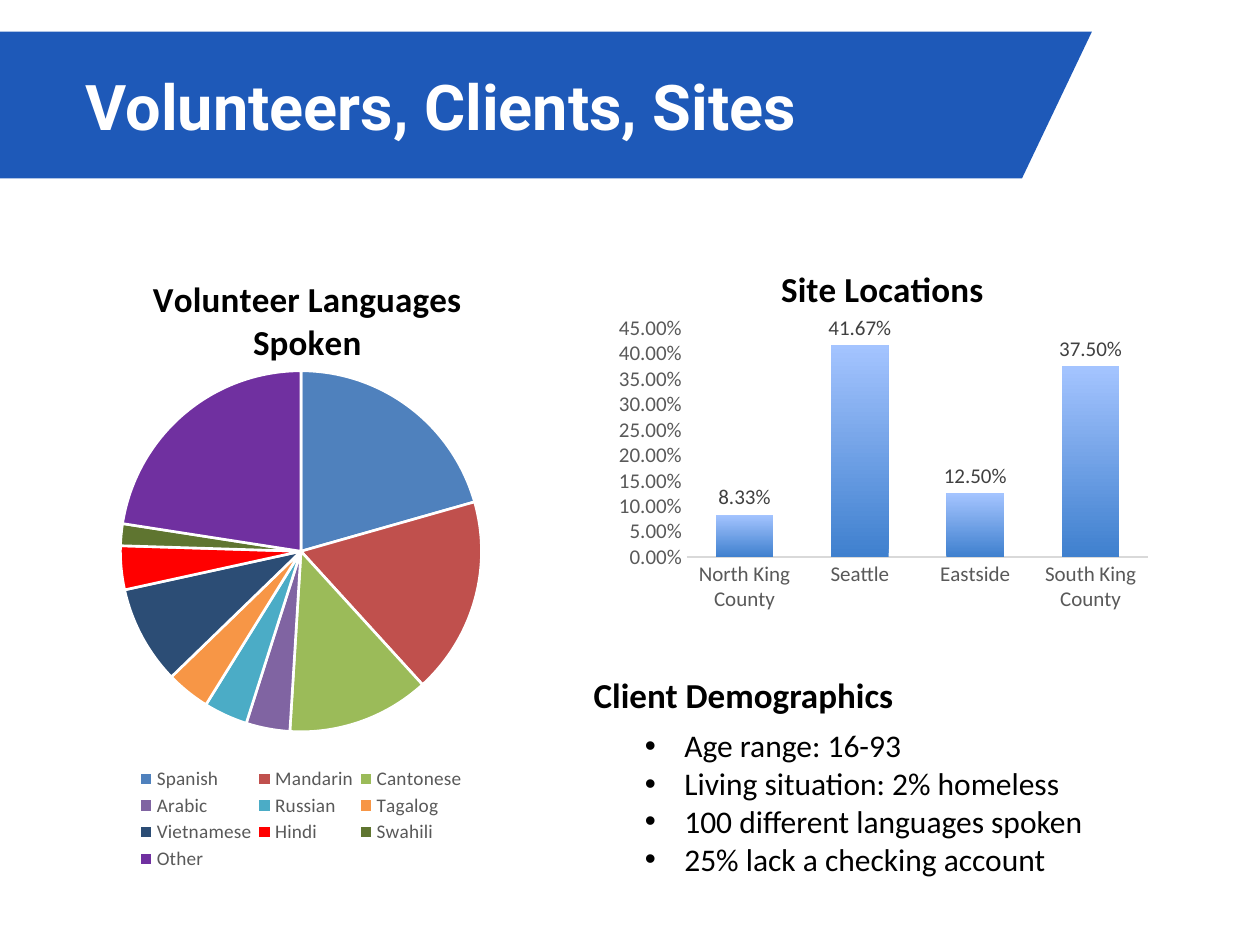
from lxml import etree
from pptx import Presentation
from pptx.chart.data import CategoryChartData
from pptx.dml.color import RGBColor
from pptx.enum.chart import XL_CHART_TYPE as ChartType
from pptx.enum.chart import XL_LABEL_POSITION as LabelPosition
from pptx.enum.chart import XL_LEGEND_POSITION as LegendPosition
from pptx.enum.chart import XL_TICK_MARK as TickMark
from pptx.enum.text import MSO_ANCHOR as Anchor
from pptx.enum.text import PP_ALIGN as Align
from pptx.oxml.ns import qn
from pptx.util import Pt

LANGUAGES = [
    ("Spanish", 21, "4F81BD"), ("Mandarin", 18, "C0504D"),
    ("Cantonese", 13, "9BBB59"), ("Arabic", 4, "8064A2"),
    ("Russian", 4, "4BACC6"), ("Tagalog", 4, "F79646"),
    ("Vietnamese", 9, "2C4D75"), ("Hindi", 4, "FF0000"),
    ("Swahili", 2, "5F7530"), ("Other", 23, "7030A0"),
]
SITES = [("North King County", 0.0833), ("Seattle", 0.4167),
         ("Eastside", 0.125), ("South King County", 0.375)]
DEMOGRAPHICS = ["Age range: 16-93", "Living situation: 2% homeless",
                "100 different languages spoken", "25% lack a checking account"]


def color(hex_value):
    """Turn a hex string into a colour."""
    return RGBColor.from_string(hex_value)


def set_font(font, size, hex_value, bold=False, name="Calibri"):
    """Apply typeface, size, weight and colour."""
    font.name, font.size, font.bold = name, Pt(size), bold
    font.color.rgb = color(hex_value)


def indent(paragraph, margin, first_line=0, bullet=None):
    """Set the left margin, first-line indent and bullet of a paragraph."""
    properties = paragraph._p.get_or_add_pPr()
    properties.set("marL", str(Pt(margin)))
    properties.set("indent", str(Pt(first_line)))
    if bullet:
        font = etree.SubElement(properties, qn("a:buFont"))
        font.set("typeface", "Arial")
        etree.SubElement(properties, qn("a:buChar")).set("char", bullet)


def place(element, position, target=None, **fractions):
    """Give a chart part a manual layout in fractions of the chart."""
    for old in element.findall(qn("c:layout")):
        element.remove(old)
    layout = etree.Element(qn("c:layout"))
    manual = etree.SubElement(layout, qn("c:manualLayout"))
    settings = {"layoutTarget": target} if target else {}
    settings.update(xMode="edge", yMode="edge", **fractions)
    for tag, value in settings.items():
        etree.SubElement(manual, qn(f"c:{tag}")).set("val", str(value))
    element.insert(position, layout)


def add_banner(slide, title):
    """Draw the slanted title banner."""
    builder = slide.shapes.build_freeform(-30, 102, scale=Pt(1))
    builder.add_line_segments([(-7, 18), (624, 18), (584.5, 101.5)], close=True)
    shape = builder.convert_to_shape()
    shape.shadow.inherit = False
    shape.fill.solid()
    shape.fill.fore_color.rgb = color("1E59B8")
    shape.line.fill.background()
    frame = shape.text_frame
    frame.text = title
    frame.vertical_anchor = Anchor.MIDDLE
    paragraph = frame.paragraphs[0]
    paragraph.alignment = Align.LEFT
    indent(paragraph, 72)
    set_font(paragraph.runs[0].font, 36, "FFFFFF", True, "Roboto")


def add_chart(slide, kind, box, title, rows, title_place, plot_place):
    """Add a one-series chart with a title and return it."""
    data = CategoryChartData()
    data.categories = [row[0] for row in rows]
    data.add_series("Series 1", [row[1] for row in rows])
    chart = slide.shapes.add_chart(kind, *map(Pt, box), data).chart
    set_font(chart.font, 10, "000000")
    frame = chart.chart_title.text_frame
    frame.text = title
    set_font(frame.paragraphs[0].runs[0].font, 20, "000000", True)
    place(chart.chart_title._element, 1, **title_place)
    place(chart._chartSpace.chart.plotArea, 0, "inner", **plot_place)
    return chart


def add_language_pie(slide):
    """Add the pie of volunteer languages."""
    chart = add_chart(slide, ChartType.PIE, (46, 134.5, 252, 368.5),
                      "Volunteer Languages Spoken", LANGUAGES,
                      dict(x=0.15, y=0.05), dict(x=0.09, y=0.21, w=0.82, h=0.56))
    chart.has_legend = True
    legend = chart.legend
    legend.position = LegendPosition.BOTTOM
    legend.include_in_layout = False
    set_font(legend.font, 11, "595959")
    place(legend._element, 1, x=0.12, y=0.82, w=0.76, h=0.17)
    series = chart.plots[0].series[0]
    for index, (_, _, hex_value) in enumerate(LANGUAGES):
        slice_format = series.points[index].format
        slice_format.fill.solid()
        slice_format.fill.fore_color.rgb = color(hex_value)
        slice_format.line.color.rgb = color("FFFFFF")
        slice_format.line.width = Pt(1.5)


def style_axis(axis):
    """Remove ticks and gridlines and set the label font."""
    axis.has_major_gridlines = False
    axis.major_tick_mark = axis.minor_tick_mark = TickMark.NONE
    set_font(axis.tick_labels.font, 12, "595959")


def add_site_columns(slide):
    """Add the column chart of site locations."""
    chart = add_chart(slide, ChartType.COLUMN_CLUSTERED, (348.5, 129, 314, 225.5),
                      "Site Locations", SITES,
                      dict(x=0.3, y=0.08), dict(x=0.14, y=0.26, w=0.84, h=0.58))
    chart.has_legend = False
    categories, values = chart.category_axis, chart.value_axis
    style_axis(categories)
    style_axis(values)
    categories.format.line.color.rgb = color("D9D9D9")
    categories.format.line.width = Pt(1)
    values.format.line.fill.background()
    values.minimum_scale, values.maximum_scale, values.major_unit = 0, 0.45, 0.05
    values.tick_labels.number_format = "0.00%"
    values.tick_labels.number_format_is_linked = False
    plot = chart.plots[0]
    plot.gap_width, plot.overlap, plot.vary_by_categories = 100, -24, False
    fill = plot.series[0].format.fill
    fill.gradient()
    fill.gradient_angle = 90
    for stop, hex_value in zip(fill.gradient_stops, ("3F80CE", "A4C4FF")):
        stop.color.rgb = color(hex_value)
    plot.has_data_labels = True
    labels = plot.data_labels
    labels.show_value = True
    labels.position = LabelPosition.OUTSIDE_END
    labels.number_format = "0.00%"
    labels.number_format_is_linked = False
    set_font(labels.font, 12, "404040")


def add_demographics(slide, heading, items):
    """Add the heading with its bulleted list."""
    frame = slide.shapes.add_textbox(*map(Pt, (325.5, 378, 360, 129.5))).text_frame
    frame.word_wrap = True
    frame.text = heading
    first = frame.paragraphs[0]
    first.line_spacing = Pt(27.6)
    indent(first, 6.7)
    set_font(first.runs[0].font, 20, "000000", True)
    for index, item in enumerate(items):
        paragraph = frame.add_paragraph()
        paragraph.text = item
        paragraph.level = 1
        paragraph.space_before = Pt(0 if index else 6)
        indent(paragraph, 58.5, -22.5, "•")
        set_font(paragraph.runs[0].font, 18, "000000")


def main():
    """Build and save the slide."""
    presentation = Presentation()
    presentation.slide_width, presentation.slide_height = Pt(720), Pt(540)
    slide = presentation.slides.add_slide(presentation.slide_layouts[6])
    add_banner(slide, "Volunteers, Clients, Sites")
    add_language_pie(slide)
    add_demographics(slide, "Client Demographics", DEMOGRAPHICS)
    add_site_columns(slide)
    presentation.save("out.pptx")


if __name__ == "__main__":
    main()
